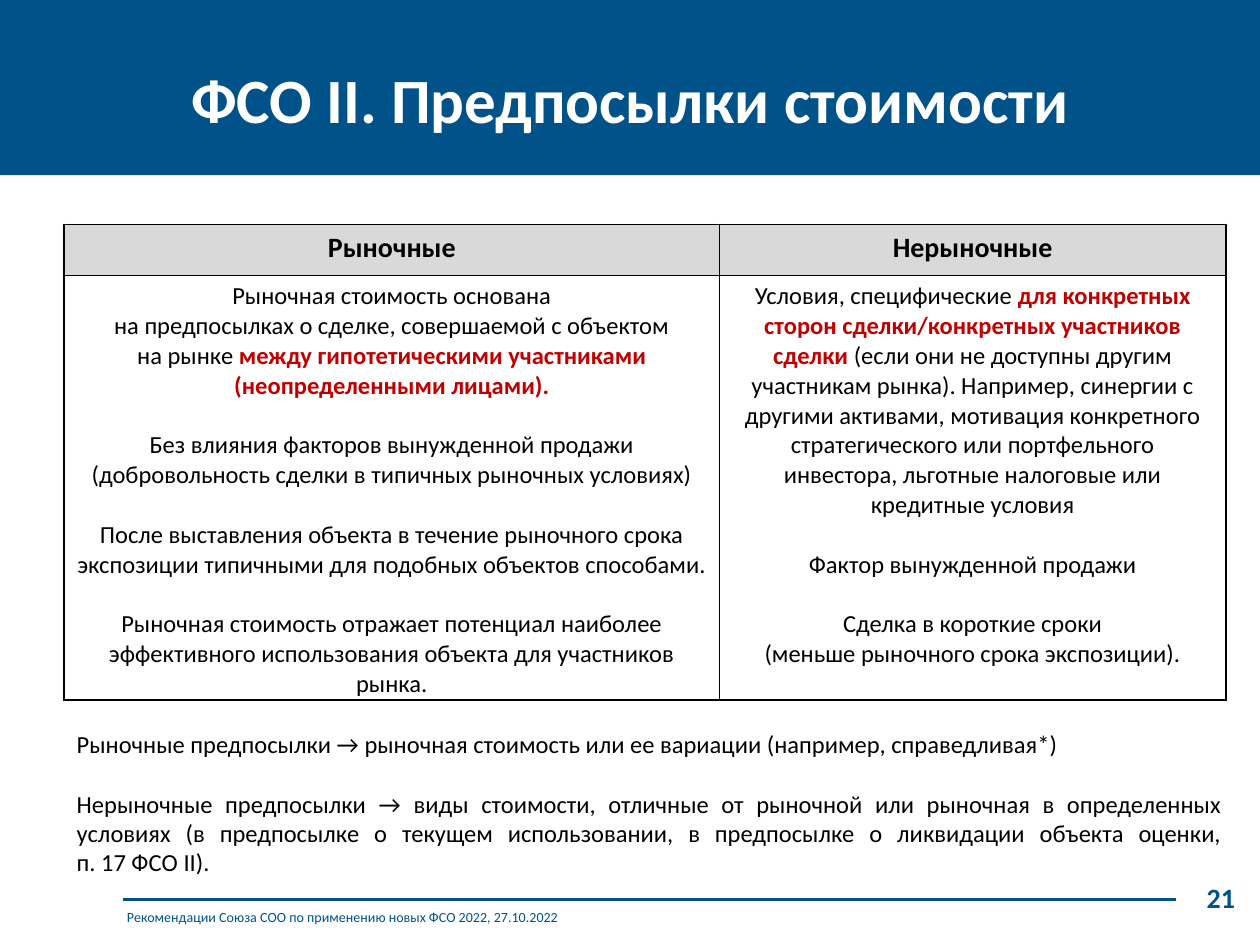
import pptx
import pptx.dml.color
import pptx.enum.shapes
import pptx.enum.text
import pptx.oxml
import pptx.oxml.ns
import pptx.util

COLORS = {"blue": "015289", "white": "FFFFFF", "black": "000000", "grey": "D9D9D9", "red": "C00000"}
FONT = "Calibri"
COLUMNS, ROWS = 100, 75
UNIT = pptx.util.Inches(10) // COLUMNS
ALIGN = pptx.enum.text.PP_ALIGN
BODY_SIZE, LINE_GAP = 14, 17

HEADINGS = ["Рыночные", "Нерыночные"]
PREMISES = [
    [
        [("Рыночная стоимость основана\nна предпосылках о сделке, совершаемой с объектом\nна рынке ", False),
         ("между гипотетическими участниками (неопределенными лицами).", True)],
        [("Без влияния факторов вынужденной продажи (добровольность сделки в типичных рыночных условиях)", False)],
        [("После выставления объекта в течение рыночного срока экспозиции типичными для подобных "
          "объектов способами.", False)],
        [("Рыночная стоимость отражает потенциал наиболее эффективного использования объекта для "
          "участников рынка.", False)],
    ],
    [
        [("Условия, специфические ", False),
         ("для конкретных сторон сделки/конкретных участников сделки ", True),
         ("(если они не доступны другим участникам рынка). Например, синергии с другими активами, "
          "мотивация конкретного стратегического или портфельного инвестора, льготные налоговые или "
          "кредитные условия", False)],
        [("Фактор вынужденной продажи", False)],
        [("Сделка в короткие сроки\n(меньше рыночного срока экспозиции).", False)],
    ],
]
CONCLUSIONS = [
    ("Рыночные предпосылки → рыночная стоимость или ее вариации (например, справедливая*)", ALIGN.LEFT),
    ("Нерыночные предпосылки → виды стоимости, отличные от рыночной или рыночная в определенных "
     "условиях (в предпосылке о текущем использовании, в предпосылке о ликвидации объекта оценки,\n"
     "п. 17 ФСО II).", ALIGN.JUSTIFY),
]


def color(name):
    """Return the named colour."""
    return pptx.dml.color.RGBColor.from_string(COLORS[name])


def grid(*cells):
    """Turn grid columns and rows into lengths."""
    return [round(cell * UNIT) for cell in cells]


def add_span(para, text, size, shade="black", bold=False):
    """Add styled text, with a line break at each newline."""
    for index, line in enumerate(text.split("\n")):
        if index:
            para.add_line_break()
        span = para.add_run()
        span.text = line
        span.font.name = FONT
        span.font.size = pptx.util.Pt(size)
        span.font.bold = bold
        span.font.color.rgb = color(shade)


def next_para(frame, index, align):
    """Return the paragraph at the index, set one line below the one before."""
    para = frame.add_paragraph() if index else frame.paragraphs[0]
    para.alignment = align
    if index:
        para.space_before = pptx.util.Pt(LINE_GAP)
    return para


def add_text_box(page, box):
    """Add a wrapping text box and return its frame."""
    frame = page.shapes.add_textbox(*grid(*box)).text_frame
    frame.word_wrap = True
    return frame


def add_label(page, box, text, size, shade, bold, align):
    """Add a text box that holds one line."""
    para = next_para(add_text_box(page, box), 0, align)
    add_span(para, text, size, shade, bold)


def add_title(page, box):
    """Draw the title band and its heading."""
    left, top, width, height = box
    band = page.shapes.add_shape(pptx.enum.shapes.MSO_SHAPE.RECTANGLE, *grid(*box))
    band.shadow.inherit = False
    band.fill.solid()
    band.fill.fore_color.rgb = color("blue")
    band.line.fill.background()
    add_label(page, (left, top + height * 0.31, width, height * 0.58),
              "ФСО II. Предпосылки стоимости", 36, "white", True, ALIGN.CENTER)


def style_cell(cell, fill=None):
    """Give a cell black borders and an optional fill."""
    properties = cell._tc.get_or_add_tcPr()
    for side in "LRTB":
        properties.append(pptx.oxml.parse_xml(
            f'<a:ln{side} {pptx.oxml.ns.nsdecls("a")} w="12700"><a:solidFill>'
            f'<a:srgbClr val="{COLORS["black"]}"/></a:solidFill></a:ln{side}>'))
    if fill:
        cell.fill.solid()
        cell.fill.fore_color.rgb = color(fill)
    else:
        cell.fill.background()


def add_premises(page, box):
    """Draw the table of market and non-market premises."""
    left, top, width, height = box
    header = 4.05
    table = page.shapes.add_table(2, 2, *grid(*box)).table
    table.first_row = table.horz_banding = False
    for row, size in zip(table.rows, grid(header, height - header)):
        row.height = size
    for column, size in zip(table.columns, grid(52, width - 52)):
        column.width = size
    for index, (heading, paras) in enumerate(zip(HEADINGS, PREMISES)):
        head, body = table.cell(0, index), table.cell(1, index)
        style_cell(head, "grey")
        add_span(next_para(head.text_frame, 0, ALIGN.CENTER), heading, 16, bold=True)
        style_cell(body)
        body.margin_bottom = 0
        for number, spans in enumerate(paras):
            para = next_para(body.text_frame, number, ALIGN.CENTER)
            for text, marked in spans:
                add_span(para, text, BODY_SIZE, "red" if marked else "black", marked)


def add_conclusions(page, box):
    """Write the conclusions under the table."""
    frame = add_text_box(page, box)
    for index, (text, align) in enumerate(CONCLUSIONS):
        add_span(next_para(frame, index, align), text, BODY_SIZE)


def add_footer(page, box):
    """Draw the footer rule, the source line and the page number."""
    left, top, width, height = box
    rule_top = top + 2
    rule = page.shapes.add_connector(
        pptx.enum.shapes.MSO_CONNECTOR.STRAIGHT, *grid(left + 0.7, rule_top, left + 84.2, rule_top))
    rule.line.color.rgb = color("blue")
    rule.line.width = pptx.util.Pt(1.5)
    rule._element.spPr.append(pptx.oxml.parse_xml(f'<a:effectLst {pptx.oxml.ns.nsdecls("a")}/>'))
    add_label(page, (left, top + 2.2, 83.4, height - 2.2),
              "Рекомендации Союза СОО по применению новых ФСО 2022, 27.10.2022",
              8, "blue", False, ALIGN.LEFT)
    add_label(page, (left + width - 26.2, top, 26.2, 3.7), "21", 16, "blue", True, ALIGN.RIGHT)


def main():
    """Build and save the deck."""
    deck = pptx.Presentation()
    deck.slide_width, deck.slide_height = grid(COLUMNS, ROWS)
    page = deck.slides.add_slide(deck.slide_layouts[6])
    add_footer(page, (9.1, 69.4, 89.9, 4.6))
    add_title(page, (0, 0, COLUMNS, 13.9))
    add_premises(page, (5.1, 17.8, 92.2, 37.75))
    add_conclusions(page, (5.1, 57.4, 92.9, 12.8))
    deck.save("out.pptx")


if __name__ == "__main__":
    main()
